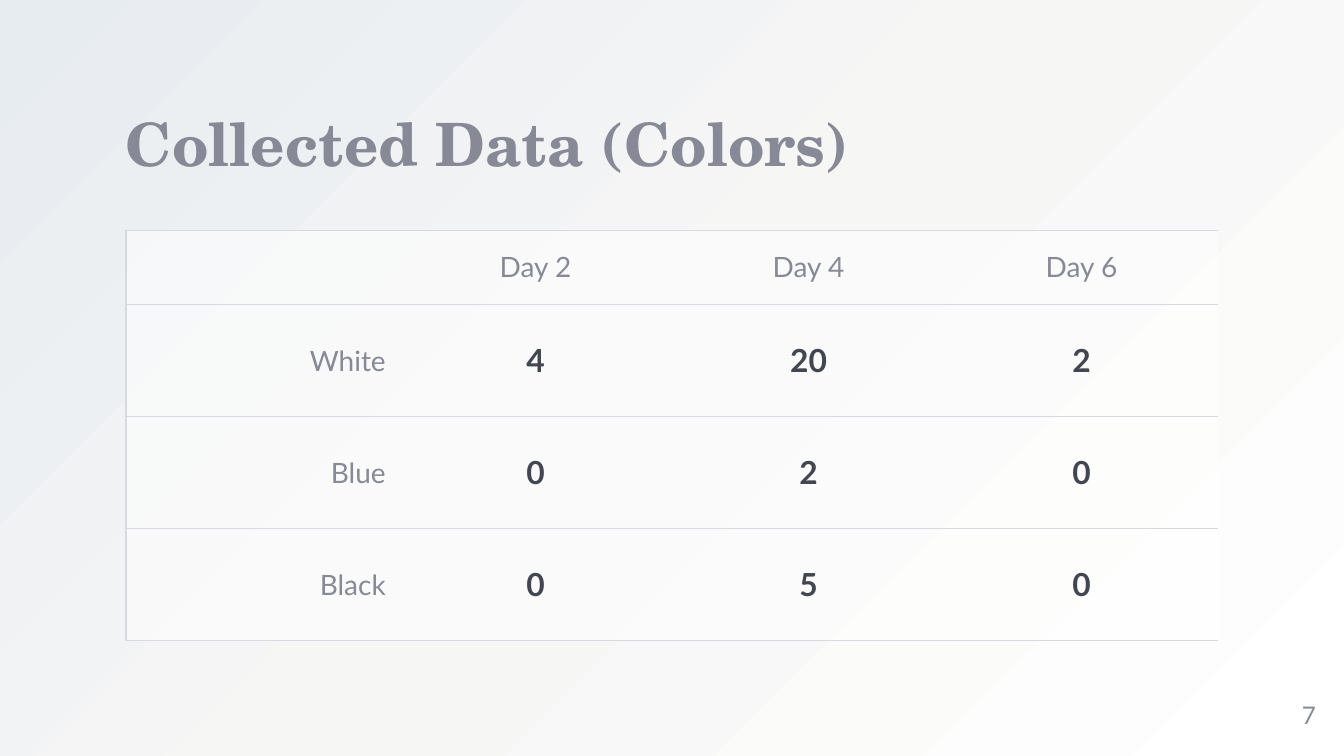
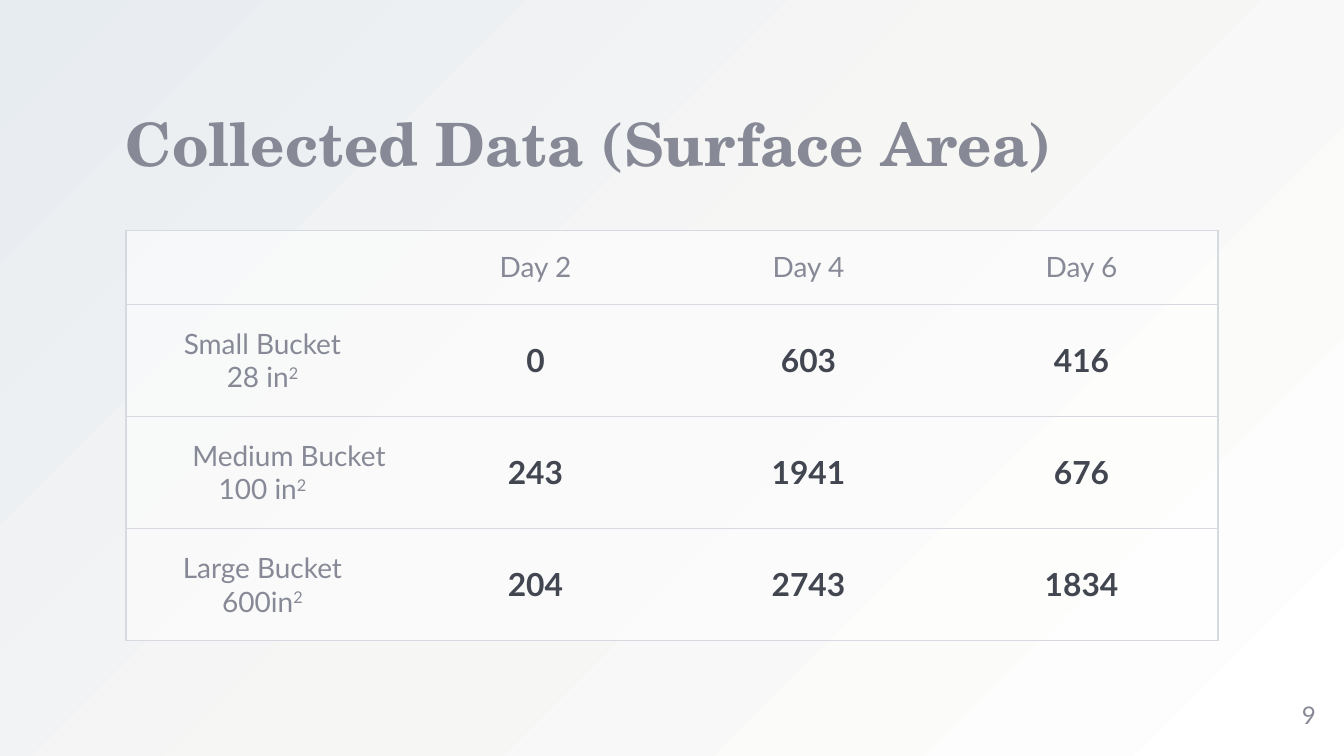
from dataclasses import dataclass

from lxml import etree
from pptx import Presentation
from pptx.dml.color import RGBColor
from pptx.enum.text import MSO_ANCHOR, PP_ALIGN
from pptx.oxml.ns import qn
from pptx.util import Cm, Pt

LEFT, CENTER, RIGHT = PP_ALIGN.LEFT, PP_ALIGN.CENTER, PP_ALIGN.RIGHT
MIDDLE, BOTTOM = MSO_ANCHOR.MIDDLE, MSO_ANCHOR.BOTTOM


@dataclass(frozen=True)
class Theme:
    heading_font: str = "TeX Gyre Schola"
    body_font: str = "Lato"
    muted: str = "878A96"
    dark: str = "424650"
    border: str = "D6DAE0"
    cell: str = "FFFFFF"
    cell_alpha: int = 55
    backdrop: tuple = ((0, "FFFFFF"), (50, "F6F6F5"), (100, "E7ECF0"))
    title_size: int = 32
    label_size: int = 15
    value_size: int = 17
    number_size: int = 13
    border_width: float = 0.75


theme = Theme()

MARGIN, TABLE_TOP = 2.38, 4.35
COL_WIDTH, HEADER_HEIGHT, ROW_HEIGHT = 5.16, 1.4, 2.12
DAYS = ["Day 2", "Day 4", "Day 6"]

SLIDES = [
    {
        "title": "Collected Data (Colors)",
        "number": "7",
        "right_border": False,
        "rows": [
            ([("White", RIGHT)], ["4", "20", "2"]),
            ([("Blue", RIGHT)], ["0", "2", "0"]),
            ([("Black", RIGHT)], ["0", "5", "0"]),
        ],
    },
    {
        "title": "Collected Data (Surface Area)",
        "number": "9",
        "right_border": True,
        "rows": [
            ([("Small Bucket", CENTER), ("28 in^2", CENTER)], ["0", "603", "416"]),
            ([("Medium Bucket", RIGHT), ("100 in^2", CENTER)], ["243", "1941", "676"]),
            ([("Large Bucket", CENTER), ("600in^2", CENTER)], ["204", "2743", "1834"]),
        ],
    },
]


def write(tf, lines, font, size, color, bold=False):
    for i, (text, align) in enumerate(lines):
        p = tf.add_paragraph() if i else tf.paragraphs[0]
        p.alignment = align
        p.font.name, p.font.size, p.font.bold = font, Pt(size), bold
        p.font.color.rgb = RGBColor.from_string(color)
        base, _, power = text.partition("^")
        p.add_run().text = base
        if power:
            r = p.add_run()
            r.text = power
            r.font._element.set("baseline", "30000")


def add_text(s, box, line, anchor, font, size, bold=False):
    tf = s.shapes.add_textbox(*map(Cm, box)).text_frame
    tf.margin_left = tf.margin_right = tf.margin_top = tf.margin_bottom = 0
    tf.word_wrap = True
    tf.vertical_anchor = anchor
    write(tf, [line], font, size, theme.muted, bold)
    return tf


prs = Presentation()
prs.slide_width, prs.slide_height = Cm(25.4), Cm(14.29)

for data in SLIDES:
    s = prs.slides.add_slide(prs.slide_layouts[6])

    fill = s.background.fill
    fill.gradient()
    fill.gradient_angle = 135
    stops = s.background._cSld.find(".//" + qn("a:gsLst"))
    for stop in list(stops):
        stops.remove(stop)
    for position, color in theme.backdrop:
        stop = etree.SubElement(stops, qn("a:gs"), pos=str(position * 1000))
        etree.SubElement(stop, qn("a:srgbClr"), val=color)

    tf = add_text(s, (MARGIN, 2.32, 4 * COL_WIDTH, 1.08), (data["title"], LEFT),
                  BOTTOM, theme.heading_font, theme.title_size, True)
    tf.paragraphs[0].line_spacing = 0.9

    grid = [([], DAYS)] + data["rows"]
    height = HEADER_HEIGHT + ROW_HEIGHT * len(data["rows"])
    table = s.shapes.add_table(len(grid), len(DAYS) + 1, Cm(MARGIN), Cm(TABLE_TOP),
                               Cm(4 * COL_WIDTH), Cm(height)).table
    table.first_row = table.horz_banding = False
    for col in table.columns:
        col.width = Cm(COL_WIDTH)

    for i, (label, values) in enumerate(grid):
        table.rows[i].height = Cm(ROW_HEIGHT if i else HEADER_HEIGHT)
        for j, lines in enumerate([label] + [[(v, CENTER)] for v in values]):
            cell = table.cell(i, j)
            cell.vertical_anchor = MIDDLE
            cell.margin_left = cell.margin_right = Cm(0.25)
            cell.margin_top = cell.margin_bottom = Cm(0.18)
            if i and j:
                write(cell.text_frame, lines, theme.body_font, theme.value_size, theme.dark, True)
            else:
                write(cell.text_frame, lines, theme.body_font, theme.label_size, theme.muted)

            cell.fill.solid()
            cell.fill.fore_color.rgb = RGBColor.from_string(theme.cell)
            tc_pr = cell._tc.get_or_add_tcPr()
            etree.SubElement(tc_pr.find(".//" + qn("a:srgbClr")), qn("a:alpha"),
                             val=str(theme.cell_alpha * 1000))
            sides = {"L": j == 0, "R": j == len(DAYS) and data["right_border"], "T": True, "B": True}
            for k, (side, visible) in enumerate(sides.items()):
                ln = etree.Element(qn("a:ln" + side), w=str(Pt(theme.border_width)))
                if visible:
                    solid = etree.SubElement(ln, qn("a:solidFill"))
                    etree.SubElement(solid, qn("a:srgbClr"), val=theme.border)
                else:
                    etree.SubElement(ln, qn("a:noFill"))
                tc_pr.insert(k, ln)

    add_text(s, (23.35, 12.98, 1.52, 1.08), (data["number"], RIGHT),
             MIDDLE, theme.body_font, theme.number_size)

prs.save("out.pptx")
